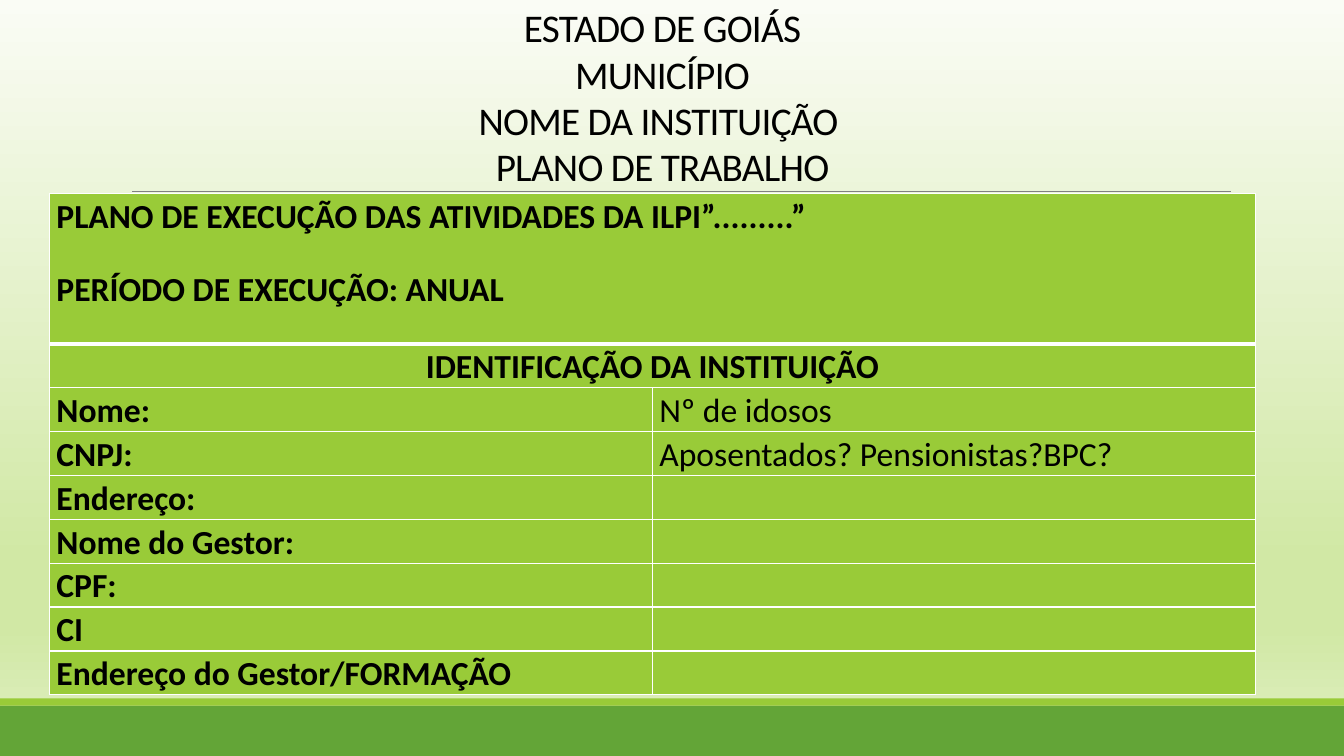
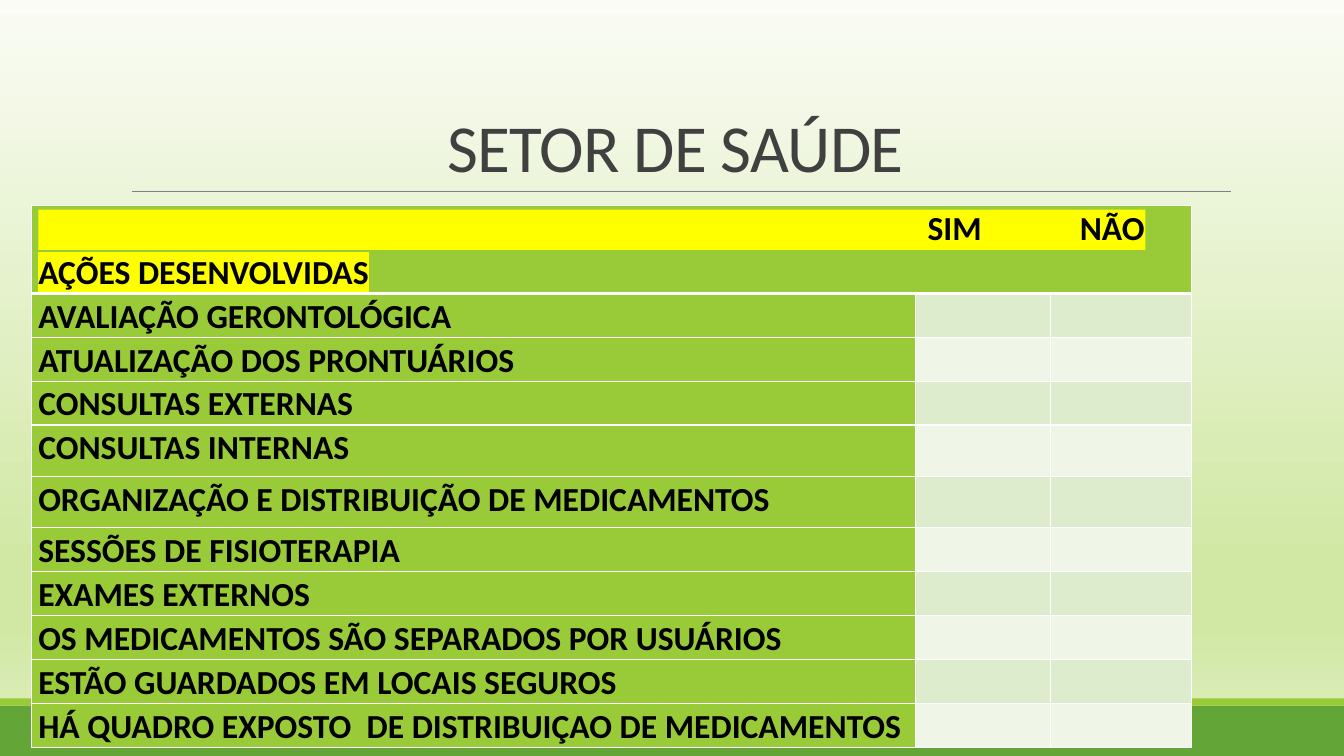
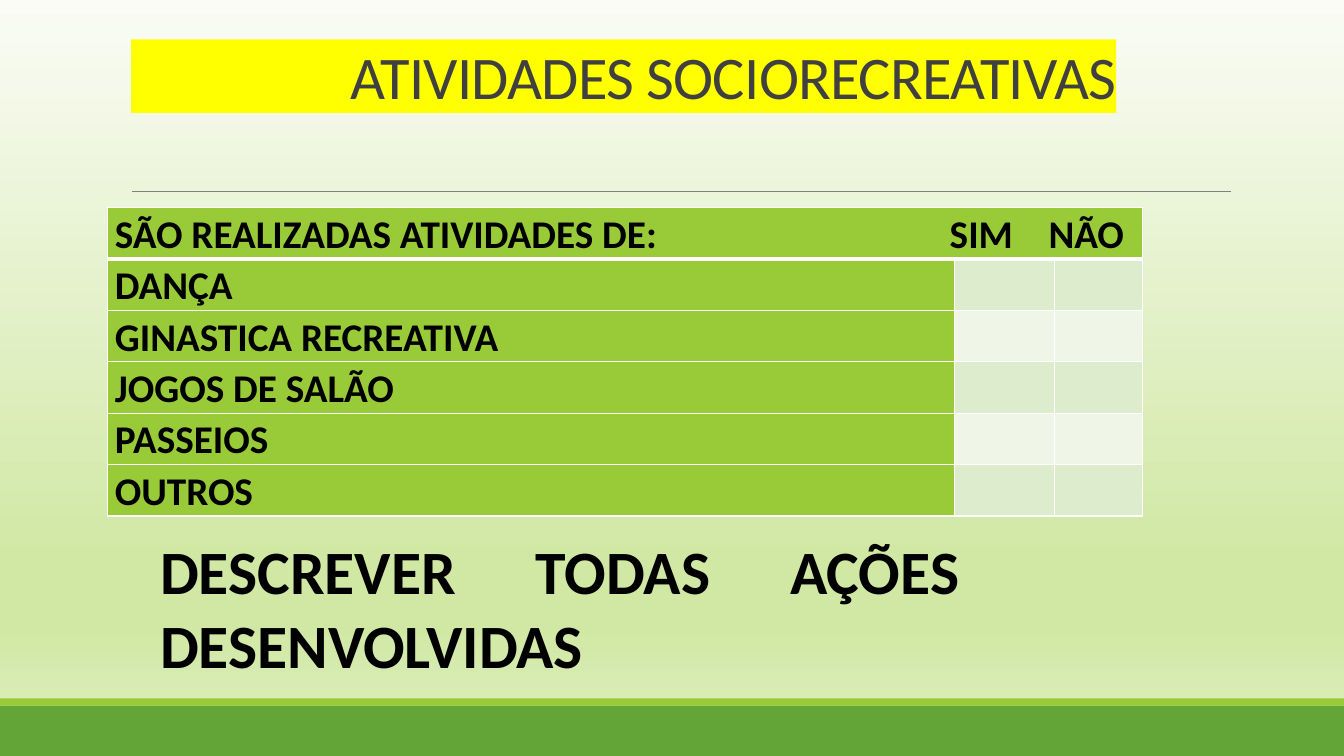
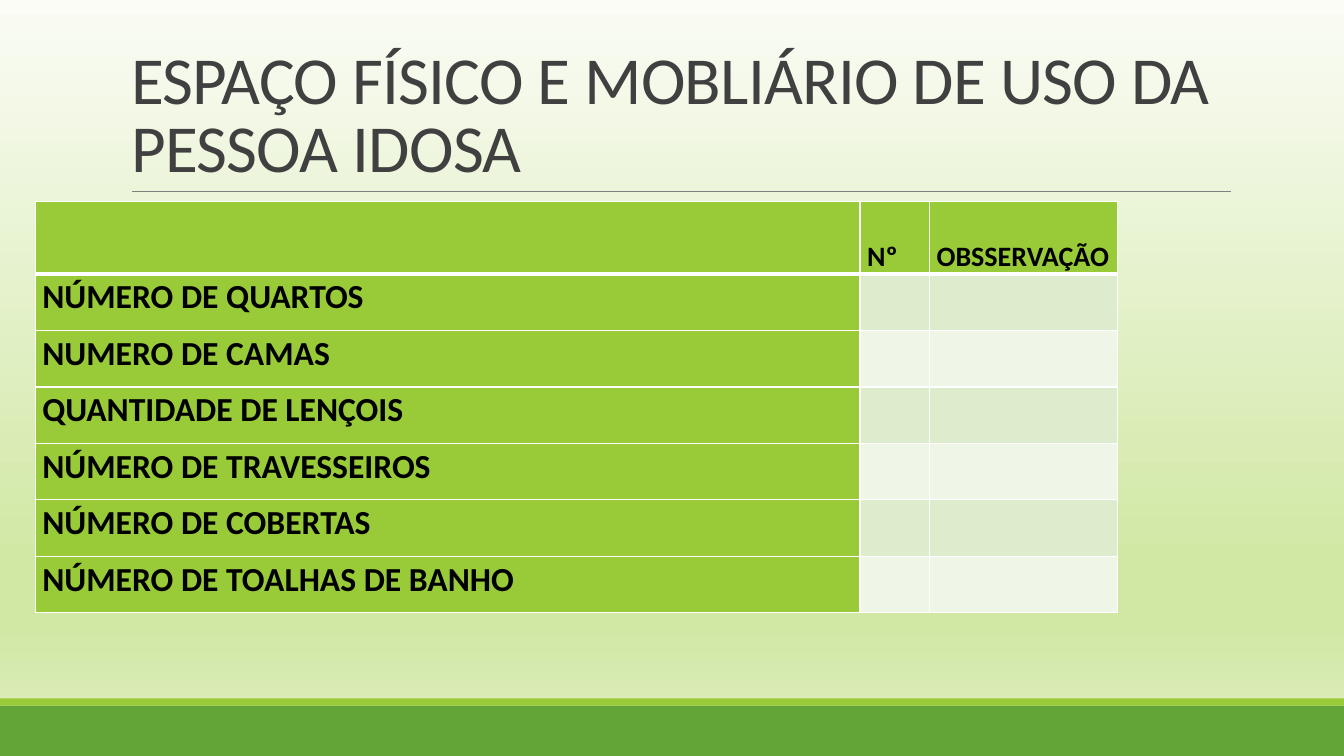
import dataclasses
import lxml.etree
import pptx
import pptx.dml.color
import pptx.enum.shapes
import pptx.enum.text
import pptx.oxml.ns
import pptx.util

Inches = pptx.util.Inches
Pt = pptx.util.Pt
Align = pptx.enum.text.PP_ALIGN
Anchor = pptx.enum.text.MSO_ANCHOR
Shape = pptx.enum.shapes.MSO_SHAPE
rgb = pptx.dml.color.RGBColor.from_string
qn = pptx.oxml.ns.qn
add = lxml.etree.SubElement


@dataclasses.dataclass(frozen=True)
class Theme:
    font: str = "Calibri"
    black: str = "000000"
    gray: str = "404040"
    rule: str = "808080"
    white: str = "FFFFFF"
    dark: str = "63A537"
    green: str = "99CB38"
    yellow: str = "FFFF00"
    bands: tuple = ("DEECCE", "EFF6E8")
    fade: tuple = ((0, "FAFCF5"), (74, "D1E8A5"), (83, "D1E8A5"), (100, "E0EFC3"))
    title: float = 48
    minor: float = 43.2
    note: float = 44
    lead: float = 28
    body: float = 24
    small: float = 20


theme = Theme()


def style(para, size, color=theme.black, bold=False, align=Align.JUSTIFY, space=1.07):
    font = para.font
    font.name, font.size, font.bold = theme.font, Pt(size), bold
    font.color.rgb = rgb(color)
    para.alignment, para.line_spacing = align, space


def block(slide, spot, color):
    shape = slide.shapes.add_shape(Shape.RECTANGLE, *map(Inches, spot))
    shape.shadow.inherit = False
    shape.fill.solid()
    shape.fill.fore_color.rgb = rgb(color)
    shape.line.fill.background()
    return shape


deck = pptx.Presentation()
deck.slide_width, deck.slide_height = Inches(13.33), Inches(7.5)

# Shared layout: background fade
base = deck.slide_layouts.get_by_name("Title Only")
fill = base.background.fill
fill.gradient()
fill.gradient_angle = 270
stops = base.element.find(".//" + qn("a:gsLst"))
for stop in list(stops):
    stops.remove(stop)
for pos, color in theme.fade:
    stop = add(stops, qn("a:gs"), pos=str(pos * 1000))
    add(stop, qn("a:srgbClr"), val=color)

# Shared layout: title place
spot = (1.2, 0.31, 11, 1.59)
head = base.placeholders[0]
head.left, head.top, head.width, head.height = map(Inches, spot)

# The four slides and their titles
titles = [
    ("ESTADO DE GOIÁS\vMUNICÍPIO\vNOME DA INSTITUIÇÃO \vPLANO DE TRABALHO",
     theme.lead, theme.black, Align.CENTER, 0.98),
    ("SETOR DE SAÚDE", theme.title, theme.gray, Align.CENTER, 0.85),
    ("ATIVIDADES SOCIORECREATIVAS", theme.minor, theme.gray, Align.LEFT, 1.0),
    ("ESPAÇO FÍSICO E MOBLIÁRIO DE USO DA PESSOA IDOSA",
     theme.title, theme.gray, Align.LEFT, 0.85),
]
slides = []
for text, size, color, align, space in titles:
    slide = deck.slides.add_slide(base)
    frame = slide.shapes.title.text_frame
    frame.text = text
    frame.word_wrap = True
    frame.auto_size = pptx.enum.text.MSO_AUTO_SIZE.NONE
    frame.vertical_anchor = Anchor.BOTTOM
    style(frame.paragraphs[0], size, color, False, align, space)
    slide.shapes.title.element.find(".//" + qn("a:defRPr")).set("spc", "-50")
    slides.append(slide)
first, health, leisure, rooms = slides

# Shared layout: bottom bands and title rule, drawn once and moved there
line = first.shapes.add_connector(
    pptx.enum.shapes.MSO_CONNECTOR.STRAIGHT,
    Inches(1.31), Inches(1.9), Inches(12.21), Inches(1.9))
line.line.color.rgb = rgb(theme.rule)
line.line.width = Pt(0.5)
add(line.element.spPr, qn("a:effectLst"))
decor = [block(first, (0, 7, 13.33, 0.5), theme.dark),
         block(first, (0, 6.93, 13.33, 0.07), theme.green), line]
for index, shape in enumerate(decor):
    shape.element.find(".//" + qn("p:cNvPr")).set("id", str(20 + index))
    base.shapes.element.insert(2 + index, shape.element)

# First title sits lower and ends above the table
head = first.shapes.title
head.left, head.top, head.width, head.height = map(Inches, (0.82, 0.94, 11.5, 1.45))
head.text_frame.margin_bottom = Inches(0.5)

# Leisure title starts inside a yellow strip
strip = block(leisure, (1.3, 0.39, 9.77, 0.73), theme.yellow)
leisure.shapes.element.insert(2, strip.element)
frame = leisure.shapes.title.text_frame
frame.vertical_anchor = Anchor.TOP
frame.margin_left, frame.margin_top = Inches(2.28), Inches(0.08)

# Health table heading shows a panel and a yellow strip through it
block(health, (0.31, 2.04, 11.51, 0.87), theme.green)
block(health, (0.38, 2.08, 10.98, 0.4), theme.yellow)

# Tables: slide, spot, columns, row heights, type size, rows, merged rows, tabs
grids = [
    (first, (0.49, 1.92), (5.98, 5.98), [1.49] + [0.43] * 8, theme.body, [
        ("PLANO DE EXECUÇÃO DAS ATIVIDADES DA ILPI”.........”\n"
         "PERÍODO DE EXECUÇÃO: ANUAL",),
        ("IDENTIFICAÇÃO DA INSTITUIÇÃO",),
        ("Nome:", "Nº de idosos"),
        ("CNPJ:", "Aposentados? Pensionistas?BPC?"),
        ("Endereço:",), ("Nome do Gestor:",), ("CPF:",), ("CI",),
        ("Endereço do Gestor/FORMAÇÃO",)], 2, ()),
    (health, (0.31, 2.04), (8.77, 1.34, 1.4),
     [0.87] + [0.43] * 3 + [0.51] * 2 + [0.43] * 5, theme.body, [
        ("\tSIM\tNÃO\nAÇÕES DESENVOLVIDAS",),
        ("AVALIAÇÃO GERONTOLÓGICA",), ("ATUALIZAÇÃO DOS PRONTUÁRIOS",),
        ("CONSULTAS EXTERNAS",), ("CONSULTAS INTERNAS",),
        ("ORGANIZAÇÃO E DISTRIBUIÇÃO DE MEDICAMENTOS",),
        ("SESSÕES DE FISIOTERAPIA",), ("EXAMES EXTERNOS",),
        ("OS MEDICAMENTOS SÃO SEPARADOS POR USUÁRIOS",),
        ("ESTÃO GUARDADOS EM LOCAIS SEGUROS",),
        ("HÁ QUADRO EXPOSTO  DE DISTRIBUIÇAO DE MEDICAMENTOS",)], 1, (8.82, 10.33)),
    (leisure, (1.07, 2.06), (8.4, 0.99, 0.87), [0.51] * 6, theme.lead, [
        ("SÃO REALIZADAS ATIVIDADES DE:\tSIM\tNÃO",),
        ("DANÇA",), ("GINASTICA RECREATIVA",), ("JOGOS DE SALÃO",),
        ("PASSEIOS",), ("OUTROS",)], 1, (8.28, 9.26)),
    (rooms, (0.35, 2), (8.18, 0.69, 1.86), [0.72] + [0.56] * 6, theme.body, [
        ("", "Nº", "OBSSERVAÇÃO"),
        ("NÚMERO DE QUARTOS",), ("NUMERO DE CAMAS",), ("QUANTIDADE DE LENÇOIS",),
        ("NÚMERO DE TRAVESSEIROS",), ("NÚMERO DE COBERTAS",),
        ("NÚMERO DE TOALHAS DE BANHO",)], 0, ()),
]
for slide, spot, cols, tall, size, rows, merged, tabs in grids:
    box = slide.shapes.add_table(
        len(rows), len(cols), *map(Inches, (*spot, sum(cols), sum(tall))))
    table = box.table
    table.first_row = table.horz_banding = False
    for col, width in zip(table.columns, cols):
        col.width = Inches(width)

    # Cell text and fill
    for r, texts in enumerate(rows):
        table.rows[r].height = Inches(tall[r])
        if r < merged:
            table.cell(r, 0).merge(table.cell(r, len(cols) - 1))
        for c in range(len(cols)):
            cell = table.cell(r, c)
            cell.margin_left = cell.margin_right = Inches(0.07)
            cell.margin_top = cell.margin_bottom = 0
            if slide is health and r == 0:
                cell.fill.background()
            else:
                band = theme.bands[(r - 1) % 2]
                green = slide is first or r == 0 or c == 0
                cell.fill.solid()
                cell.fill.fore_color.rgb = rgb(theme.green if green else band)
            if c >= len(texts) or not texts[c]:
                continue
            cell.text_frame.text = texts[c]
            for para in cell.text_frame.paragraphs:
                style(para, size, bold=slide is not first or c == 0)
                if slide is rooms and r == 0:
                    para.font.size = Pt(theme.small)
                    cell.vertical_anchor = Anchor.BOTTOM

    # Tab stops of the heading
    if tabs:
        props = box.element.find(".//" + qn("a:pPr"))
        stops = lxml.etree.Element(qn("a:tabLst"))
        for tab in tabs:
            add(stops, qn("a:tab"), pos=str(Inches(tab)), algn="l")
        props.find(qn("a:defRPr")).addprevious(stops)

    # White cell borders, thick below the heading
    for r, row in enumerate(box.element.iter(qn("a:tr"))):
        for props in row.iter(qn("a:tcPr")):
            for i, side in enumerate("LRTB"):
                thick = (r, side) in ((0, "B"), (1, "T"))
                edge = lxml.etree.Element(qn("a:ln" + side), w=str(Pt(3 if thick else 1)))
                paint = add(edge, qn("a:solidFill"))
                add(paint, qn("a:srgbClr"), val=theme.white)
                props.insert(i, edge)

    # Details of single tables
    if slide is first:
        table.cell(0, 0).text_frame.paragraphs[1].space_before = Pt(21)
        table.cell(1, 0).text_frame.paragraphs[0].alignment = Align.CENTER
    if slide is health:
        for run in box.element.iter(qn("a:r")):
            if run.text == "AÇÕES DESENVOLVIDAS":
                mark = add(run.get_or_add_rPr(), qn("a:highlight"))
                add(mark, qn("a:srgbClr"), val=theme.yellow)

# Closing note of the leisure slide
note = leisure.shapes.add_textbox(*map(Inches, (1.49, 5.24, 8.13, 1.58)))
note.text_frame.word_wrap = True
note.text_frame.text = "DESCREVER TODAS AÇÕES DESENVOLVIDAS"
style(note.text_frame.paragraphs[0], theme.note, bold=True, space=1.0)

deck.save("out.pptx")
